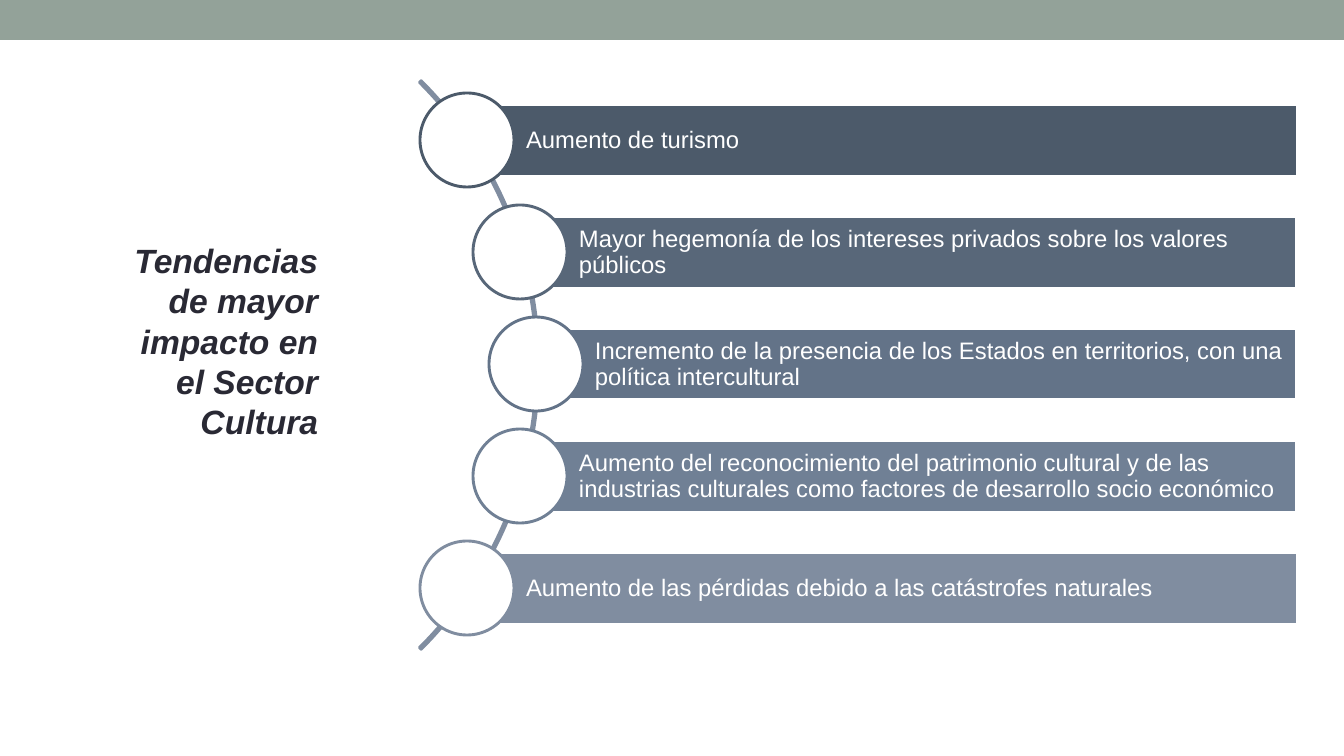
"""Slide listing five trends in the culture sector along an arc."""
from math import sqrt
from pptx import Presentation
from pptx.dml.color import RGBColor
from pptx.enum.shapes import MSO_SHAPE
from pptx.enum.text import MSO_ANCHOR, PP_ALIGN
from pptx.util import Pt

RECT, OVAL, ARC = MSO_SHAPE.RECTANGLE, MSO_SHAPE.OVAL, MSO_SHAPE.BLOCK_ARC
MIDDLE, LEFT, RIGHT = MSO_ANCHOR.MIDDLE, PP_ALIGN.LEFT, PP_ALIGN.RIGHT
PX = 914400 / 100.8


def px(n):
    return round(n * PX)


def add_shape(kind, x, y, w, h, fill=None, line=None):
    sp = s.shapes.add_shape(kind, px(x), px(y), px(w), px(h))
    sp.shadow.inherit = False
    if fill:
        sp.fill.solid()
        sp.fill.fore_color.rgb = RGBColor.from_string(fill)
    else:
        sp.fill.background()
    if line:
        sp.line.color.rgb = RGBColor.from_string(line)
        sp.line.width = Pt(2.08)
    else:
        sp.line.fill.background()
    return sp


prs = Presentation()
prs.slide_width, prs.slide_height = px(1344), px(756)
s = prs.slides.add_slide(prs.slide_layouts[6])

add_shape(RECT, 0, 0, 1344, 40, "93A299")

arc = add_shape(ARC, -265, -37, 804, 804, line="808DA0")
for i, value in enumerate((189, 27, 0.003)):
    arc.adjustments[i] = value

trends = [
    ("Aumento de turismo", "4C5A6A"),
    ("Mayor hegemonía de los intereses privados sobre los valores públicos", "586779"),
    ("Incremento de la presencia de los Estados en territorios, con una "
     "política intercultural", "637388"),
    ("Aumento del reconocimiento del patrimonio cultural y de las industrias "
     "culturales como factores de desarrollo socio económico", "708095"),
    ("Aumento de las pérdidas debido a las catástrofes naturales", "808DA0"),
]
PITCH, BAR_TOP, BAR_H, BAR_RIGHT = 112, 105, 71, 1297
ARC_X, ARC_R, DOT = 136, 400, 94

for i, (text, color) in enumerate(trends):
    x = round(ARC_X + sqrt(ARC_R ** 2 - (PITCH * (i - 2)) ** 2))
    y = BAR_TOP + PITCH * i
    bar = add_shape(RECT, x, y, BAR_RIGHT - x, BAR_H, color, "FFFFFF")
    tf = bar.text_frame
    tf.word_wrap = True
    tf.vertical_anchor = MIDDLE
    tf.margin_left = px(59)
    tf.margin_top = tf.margin_right = tf.margin_bottom = px(5)
    p = tf.paragraphs[0]
    p.alignment = LEFT
    p.line_spacing = 0.9
    r = p.add_run()
    r.text = text
    r.font.name = "Arial"
    r.font.size = Pt(17)
    r.font.color.rgb = RGBColor.from_string("FFFFFF")
    add_shape(OVAL, x - DOT // 2, y + (BAR_H - DOT) // 2, DOT, DOT, "FFFFFF", color)

title = s.shapes.add_textbox(px(116), px(235), px(212), px(214))
tf = title.text_frame
tf.word_wrap = True
p = tf.paragraphs[0]
p.alignment = RIGHT
r = p.add_run()
r.text = "Tendencias de mayor impacto en el Sector Cultura"
r.font.name = "Arial"
r.font.size = Pt(24)
r.font.bold = r.font.italic = True
r.font.color.rgb = RGBColor.from_string("292934")

prs.save("out.pptx")
